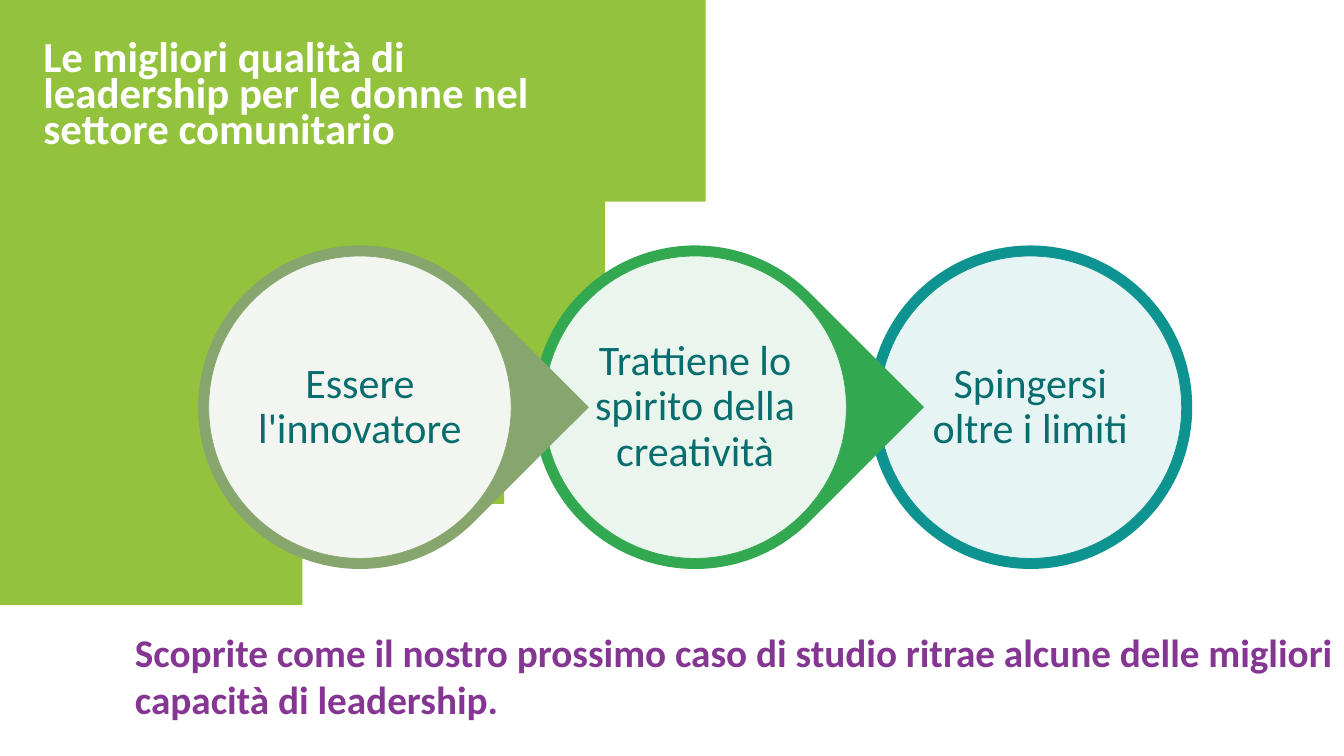
import math
import pptx
import pptx.util
import pptx.dml.color
import pptx.enum.shapes
import pptx.enum.text
import pptx.oxml
from pptx.oxml.ns import qn

Inches = pptx.util.Inches
SHAPES = pptx.enum.shapes.MSO_SHAPE
ALIGN = pptx.enum.text.PP_ALIGN
ANCHOR = pptx.enum.text.MSO_ANCHOR

HEADING = "Le migliori qualità di leadership per le donne nel settore comunitario"
QUALITIES = [
    ("Essere l'innovatore", "87A66E", SHAPES.TEAR),
    ("Trattiene lo spirito della creatività", "32A851", SHAPES.TEAR),
    ("Spingersi oltre i limiti", "0D9390", SHAPES.OVAL),
]
CLOSING = ("Scoprite come il nostro prossimo caso di studio ritrae alcune "
           "delle migliori capacità di leadership.")

WHITE, GREEN, TEAL, PURPLE = "FFFFFF", "93C23D", "086D6E", "853693"
FIRST_X, STEP, MIDDLE_Y = 3.57, 3.325, 4.04
RING, DISC, LABEL = 3.21, 3.0, 2.14
ARC_X, ARC_Y, ARC_RADIUS, ARC_STEPS = 1.74, 0.91, 4.82, 120


def color(value):
    return pptx.dml.color.RGBColor.from_string(value)


def write(box, text, size, ink, bold=False, align=ALIGN.LEFT,
          anchor=ANCHOR.TOP, spacing=1.0, inset=None):
    frame = box.text_frame
    frame.word_wrap = True
    frame.auto_size = pptx.enum.text.MSO_AUTO_SIZE.NONE
    frame.vertical_anchor = anchor
    if inset is not None:
        frame.margin_left = frame.margin_right = Inches(inset)
        frame.margin_top = frame.margin_bottom = Inches(inset)
    frame.text = text
    paragraph = frame.paragraphs[0]
    paragraph.alignment = align
    paragraph.line_spacing = spacing
    font = paragraph.runs[0].font
    font.name, font.size, font.bold = "Calibri", pptx.util.Pt(size), bold
    font.color.rgb = color(ink)


def paint(shape, fill, line=None, opacity=None):
    shape.shadow.inherit = False
    shape.fill.solid()
    shape.fill.fore_color.rgb = color(fill)
    if opacity is not None:
        tint = shape.fill._xPr.find(qn("a:solidFill"))[0]
        alpha = pptx.oxml.parse_xml(
            '<a:alpha xmlns:a="http://schemas.openxmlformats.org/'
            f'drawingml/2006/main" val="{opacity * 1000}"/>')
        tint.append(alpha)
    if line:
        shape.line.color.rgb = color(line)
        shape.line.width = pptx.util.Pt(0.5)
    else:
        shape.line.fill.background()


def square(center_x, side):
    return (Inches(center_x - side / 2), Inches(MIDDLE_Y - side / 2),
            Inches(side), Inches(side))


def draw_backdrop(slide):
    start = math.asin(-ARC_Y / ARC_RADIUS)
    end = math.acos(-ARC_X / ARC_RADIUS)
    angles = [start + (end - start) * i / ARC_STEPS for i in range(ARC_STEPS + 1)]
    arc = [(ARC_X + ARC_RADIUS * math.cos(a), ARC_Y + ARC_RADIUS * math.sin(a))
           for a in angles]
    outline = slide.shapes.build_freeform(0, 0, scale=Inches(1))
    outline.add_line_segments(arc, close=True)
    paint(outline.convert_to_shape(), GREEN)


def draw_quality(slide, center_x, label, hue, outline):
    ring = slide.shapes.add_shape(outline, *square(center_x, RING))
    if outline == SHAPES.TEAR:
        ring.rotation = 45
    paint(ring, hue)
    disc = slide.shapes.add_shape(SHAPES.OVAL, *square(center_x, DISC))
    paint(disc, WHITE, line=hue, opacity=90)
    caption = slide.shapes.add_textbox(*square(center_x, LABEL))
    write(caption, label, 30, TEAL, align=ALIGN.CENTER, anchor=ANCHOR.MIDDLE,
          spacing=0.9, inset=0.04)


def main():
    deck = pptx.Presentation()
    deck.slide_width, deck.slide_height = Inches(13.33), Inches(7.5)
    slide = deck.slides.add_slide(deck.slide_layouts[5])
    draw_backdrop(slide)

    heading = slide.shapes.title
    heading.left, heading.top = Inches(0.33), Inches(0.38)
    heading.width, heading.height = Inches(5.61), Inches(1.22)
    write(heading, HEADING, 30.6, WHITE, bold=True, spacing=0.7)
    slide.shapes._spTree.append(heading._element)

    for index, quality in reversed(list(enumerate(QUALITIES))):
        draw_quality(slide, FIRST_X + index * STEP, *quality)

    closing = slide.shapes.add_textbox(
        Inches(1.24), Inches(6.18), Inches(12.09), Inches(1.04))
    write(closing, CLOSING, 28, PURPLE, bold=True)
    deck.save("out.pptx")


if __name__ == "__main__":
    main()
